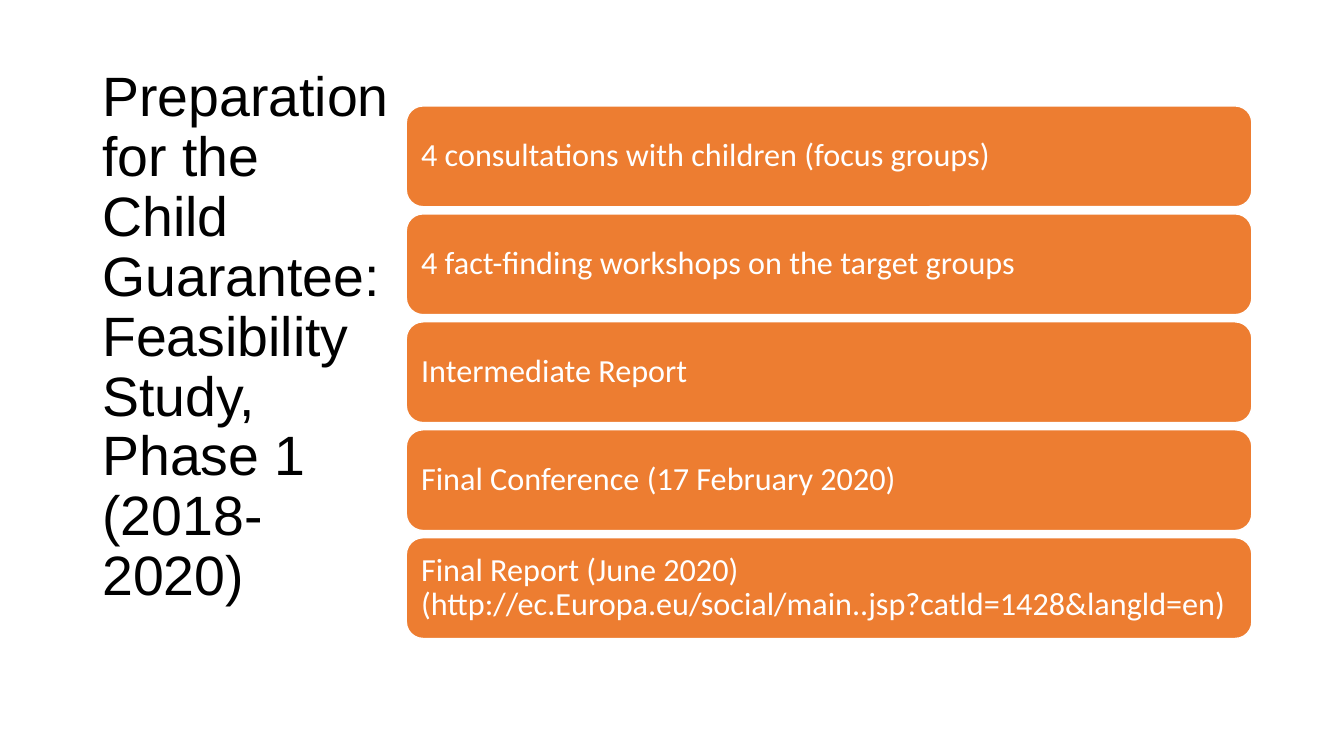
from dataclasses import dataclass

from pptx import Presentation
from pptx.dml.color import RGBColor
from pptx.enum.shapes import MSO_SHAPE
from pptx.enum.text import MSO_ANCHOR, PP_ALIGN
from pptx.util import Cm, Pt

ROUNDED = MSO_SHAPE.ROUNDED_RECTANGLE
MIDDLE = MSO_ANCHOR.MIDDLE
LEFT = PP_ALIGN.LEFT


@dataclass(frozen=True)
class Theme:
    ink: str = "000000"
    paper: str = "FFFFFF"
    accent: str = "ED7D31"
    title_font: str = "Arial"
    body_font: str = "Calibri"
    title_size: float = 39.6
    body_size: float = 23


THEME = Theme()

TITLE = "Preparation for the Child Guarantee: Feasibility Study, Phase 1 (2018-2020)"
STEPS = [
    "4 consultations with children (focus groups)",
    "4 fact-finding workshops on the target groups",
    "Intermediate Report",
    "Final Conference (17 February 2020)",
    "Final Report (June 2020) "
    "(http://ec.Europa.eu/social/main..jsp?catld=1428&langld=en)",
]

STEP_LEFT, STEP_TOP = 10.24, 2.67
STEP_WIDTH, STEP_HEIGHT = 21.31, 2.54
STEP_PITCH = 2.72


def write(tf, text, *, font, size, color, insets):
    tf.word_wrap = True
    tf.vertical_anchor = MIDDLE
    tf.margin_left, tf.margin_top, tf.margin_right, tf.margin_bottom = map(Cm, insets)
    p = tf.paragraphs[0]
    p.alignment = LEFT
    p.line_spacing = 0.9
    r = p.add_run()
    r.text = text
    r.font.name = font
    r.font.size = Pt(size)
    r.font.color.rgb = RGBColor.from_string(color)


def add_title(s, text):
    sp = s.shapes.add_textbox(Cm(2.33), Cm(1.55), Cm(7.91), Cm(15.47))
    write(sp.text_frame, text, font=THEME.title_font, size=THEME.title_size,
          color=THEME.ink, insets=(0.25, 0.13, 0.25, 1.65))


def add_step(s, text, top):
    sp = s.shapes.add_shape(ROUNDED, Cm(STEP_LEFT), Cm(top), Cm(STEP_WIDTH), Cm(STEP_HEIGHT))
    sp.shadow.inherit = False
    sp.fill.solid()
    sp.fill.fore_color.rgb = RGBColor.from_string(THEME.accent)
    sp.line.color.rgb = RGBColor.from_string(THEME.paper)
    sp.line.width = Pt(1)
    write(sp.text_frame, text, font=THEME.body_font, size=THEME.body_size,
          color=THEME.paper, insets=(0.25, 0.25, 0.25, 0.25))


def main():
    prs = Presentation()
    prs.slide_width, prs.slide_height = Cm(33.87), Cm(19.05)
    s = prs.slides.add_slide(prs.slide_layouts[6])
    add_title(s, TITLE)
    for i, text in enumerate(STEPS):
        add_step(s, text, STEP_TOP + i * STEP_PITCH)
    prs.save("out.pptx")


if __name__ == "__main__":
    main()
